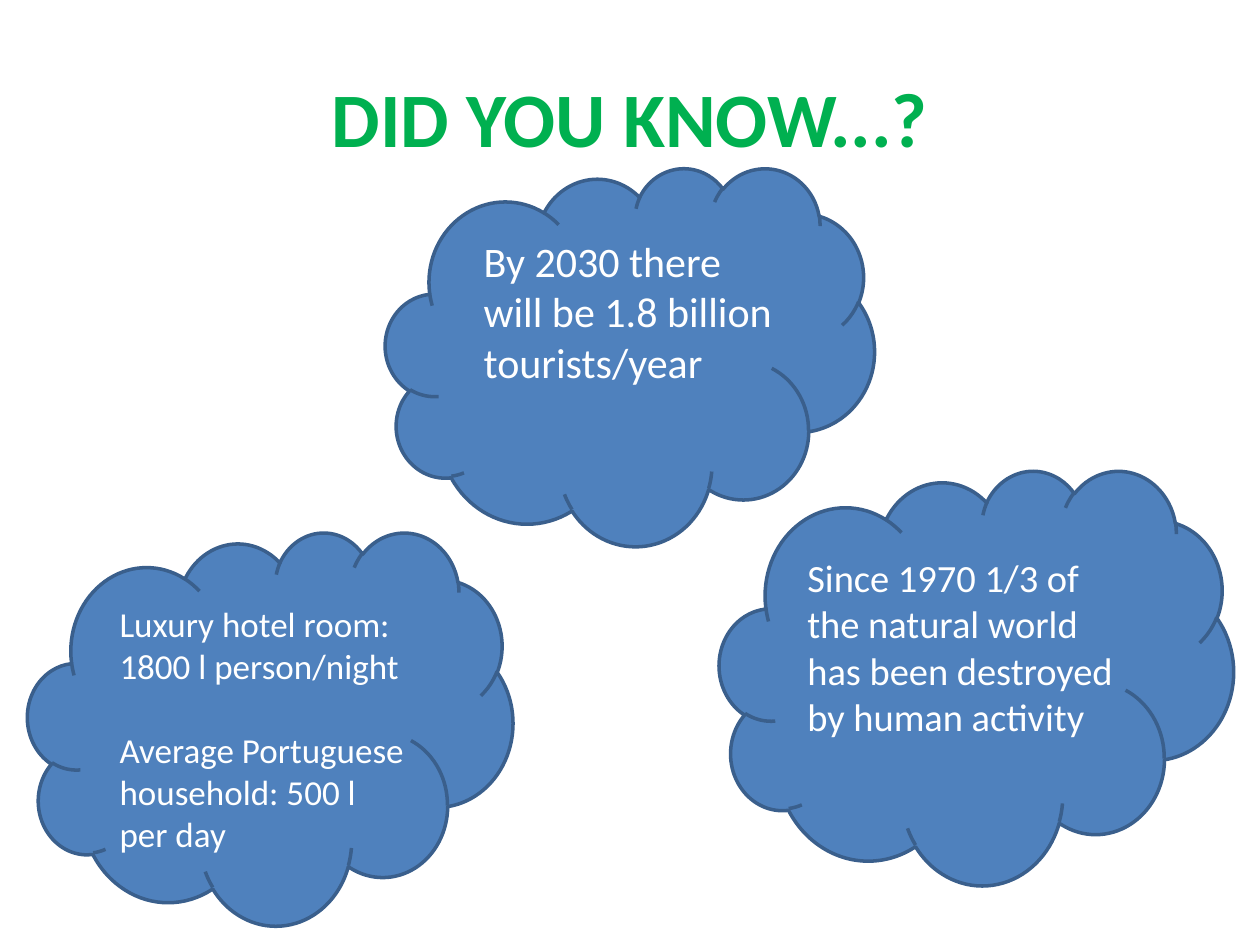
from pptx import Presentation
from pptx.dml.color import RGBColor
from pptx.enum.shapes import MSO_SHAPE
from pptx.enum.text import MSO_ANCHOR, PP_ALIGN
from pptx.util import Inches, Pt

COLORS = {"title": "00B050", "cloud": "4F81BD", "outline": "3A5F8C", "text": "FFFFFF"}
FONT = "Calibri"


def add_run(p, text, size, color, bold=False):
    r = p.add_run()
    r.text = text
    r.font.name = FONT
    r.font.size = Pt(size)
    r.font.bold = bold
    r.font.color.rgb = RGBColor.from_string(COLORS[color])


prs = Presentation()
prs.slide_width, prs.slide_height = Inches(10), Inches(7.5)
s = prs.slides.add_slide(prs.slide_layouts[5])

title = s.shapes.title
title.left, title.top = Inches(0.5), Inches(0.3)
title.width, title.height = Inches(9), Inches(1.25)
tf = title.text_frame
tf.margin_left = tf.margin_right = tf.margin_top = tf.margin_bottom = 0
tf.vertical_anchor = MSO_ANCHOR.MIDDLE
p = tf.paragraphs[0]
p.alignment = PP_ALIGN.CENTER
add_run(p, "DID YOU KNOW...?", 44, "title", bold=True)

clouds = [
    (0.22, 4.22, 3.85, 3.12),
    (5.71, 3.73, 4.08, 3.29),
    (3.06, 1.33, 3.88, 3),
]
for box in clouds:
    sp = s.shapes.add_shape(MSO_SHAPE.CLOUD, *[Inches(v) for v in box])
    sp.shadow.inherit = False
    sp.fill.solid()
    sp.fill.fore_color.rgb = RGBColor.from_string(COLORS["cloud"])
    sp.line.color.rgb = RGBColor.from_string(COLORS["outline"])
    sp.line.width = Pt(2)

facts = [
    ((3.74, 1.82, 2.57, 1.72), 24, [["By 2030 there will be 1.8 billion tourists/year"]]),
    ((0.85, 4.73, 2.89, 2.12), 20, [
        ["Luxury hotel room: 1800 l person/night"],
        ["Average Portuguese household: 500 l", "per day"],
    ]),
    ((6.31, 4.35, 2.77, 1.95), 22, [
        ["Since 1970 1/3 of the natural world has been destroyed by human activity"],
    ]),
]
for box, size, paragraphs in facts:
    tf = s.shapes.add_textbox(*[Inches(v) for v in box]).text_frame
    tf.word_wrap = True
    for i, lines in enumerate(paragraphs):
        p = tf.add_paragraph() if i else tf.paragraphs[0]
        if i:
            p.space_before = Pt(size * 1.2)
        for j, line in enumerate(lines):
            if j:
                p.add_line_break()
            add_run(p, line, size, "text")

prs.save("out.pptx")
